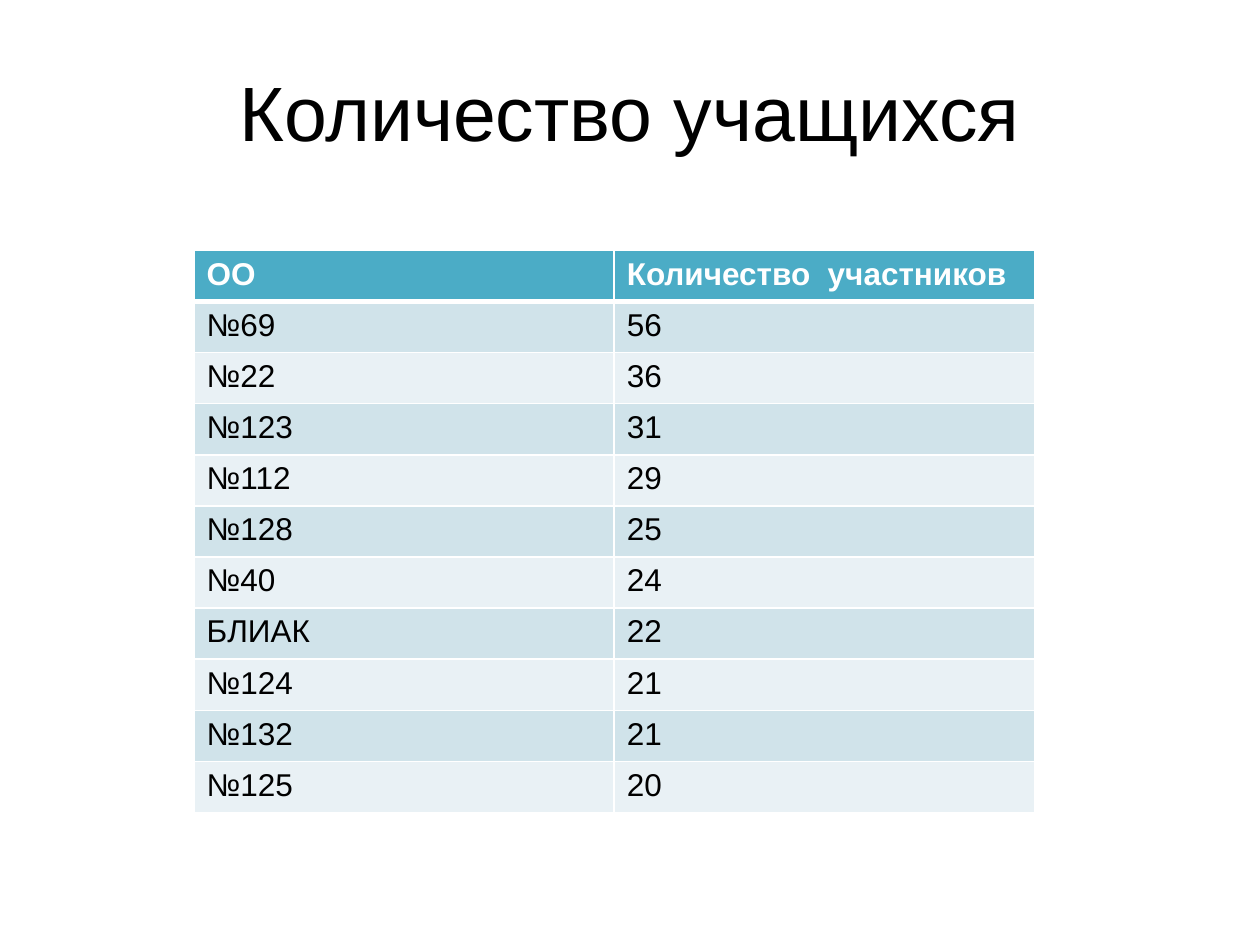
"""Build a slide with a title and a table of participants per school."""
from dataclasses import dataclass

from lxml.etree import SubElement
from pptx import Presentation
from pptx.dml.color import RGBColor as RGB
from pptx.enum.text import MSO_ANCHOR as ANCHOR, PP_ALIGN as ALIGN
from pptx.oxml.ns import qn
from pptx.util import Inches, Pt

W, H = Inches(10), Inches(7.5)
COLORS = {"text": "000000", "white": "FFFFFF", "header": "4BACC6",
          "odd": "D0E3EA", "even": "E9F1F5"}
TITLE_FONT = {"name": "Arial", "size": Pt(44), "bold": False}
BODY_FONT = {"name": "Arial", "size": Pt(18), "bold": False}
HEAD_FONT = BODY_FONT | {"bold": True}
FRAME = {"word_wrap": True, "vertical_anchor": ANCHOR.MIDDLE,
         "margin_left": 0, "margin_right": 0, "margin_top": 0, "margin_bottom": 0}


@dataclass
class Box:
    x: float
    y: float
    w: float
    h: float

    def emu(self) -> tuple:
        return int(self.x * W), int(self.y * H), int(self.w * W), int(self.h * H)


@dataclass
class Row:
    school: str
    count: str


TITLE_BOX = Box(0.05, 0.04, 0.9, 0.167)
TABLE_BOX = Box(0.154, 0.265, 0.667, 0.595)
ROWS = [Row("ОО", "Количество  участников"), Row("№69", "56"), Row("№22", "36"),
        Row("№123", "31"), Row("№112", "29"), Row("№128", "25"), Row("№40", "24"),
        Row("БЛИАК", "22"), Row("№124", "21"), Row("№132", "21"), Row("№125", "20")]


def apply(target, values: dict) -> None:
    for key, value in values.items():
        setattr(target, key, value)


def write(p, text: str, font: dict, color: str) -> None:
    r = p.add_run()
    r.text = text
    apply(r.font, font)
    r.font.color.rgb = RGB.from_string(COLORS[color])


def add_borders(cell, widths: dict) -> None:
    tc_pr = cell._tc.get_or_add_tcPr()
    for side, width in widths.items():
        ln = SubElement(tc_pr, qn(f"a:ln{side}"), w=str(Pt(width)))
        SubElement(SubElement(ln, qn("a:solidFill")), qn("a:srgbClr"), val=COLORS["white"])


def add_title(s, box: Box, text: str) -> None:
    tf = s.shapes.add_textbox(*box.emu()).text_frame
    apply(tf, FRAME)
    p = tf.paragraphs[0]
    apply(p, {"alignment": ALIGN.CENTER, "line_spacing": 0.9})
    write(p, text, TITLE_FONT, "text")


def add_table(s, box: Box, rows: list[Row]) -> None:
    table = s.shapes.add_table(len(rows), 2, *box.emu()).table
    for i, row in enumerate(rows):
        fill = "header" if i == 0 else "odd" if i % 2 else "even"
        font, color = (BODY_FONT, "text") if i else (HEAD_FONT, "white")
        borders = {"L": 1, "R": 1, "T": 3 if i == 1 else 1, "B": 1 if i else 3}
        for j, text in enumerate((row.school, row.count)):
            cell = table.cell(i, j)
            add_borders(cell, borders)
            cell.fill.solid()
            cell.fill.fore_color.rgb = RGB.from_string(COLORS[fill])
            write(cell.text_frame.paragraphs[0], text, font, color)


def main() -> None:
    prs = Presentation()
    apply(prs, {"slide_width": W, "slide_height": H})
    s = prs.slides.add_slide(prs.slide_layouts[6])
    add_title(s, TITLE_BOX, "Количество учащихся")
    add_table(s, TABLE_BOX, ROWS)
    prs.save("out.pptx")


if __name__ == "__main__":
    main()
